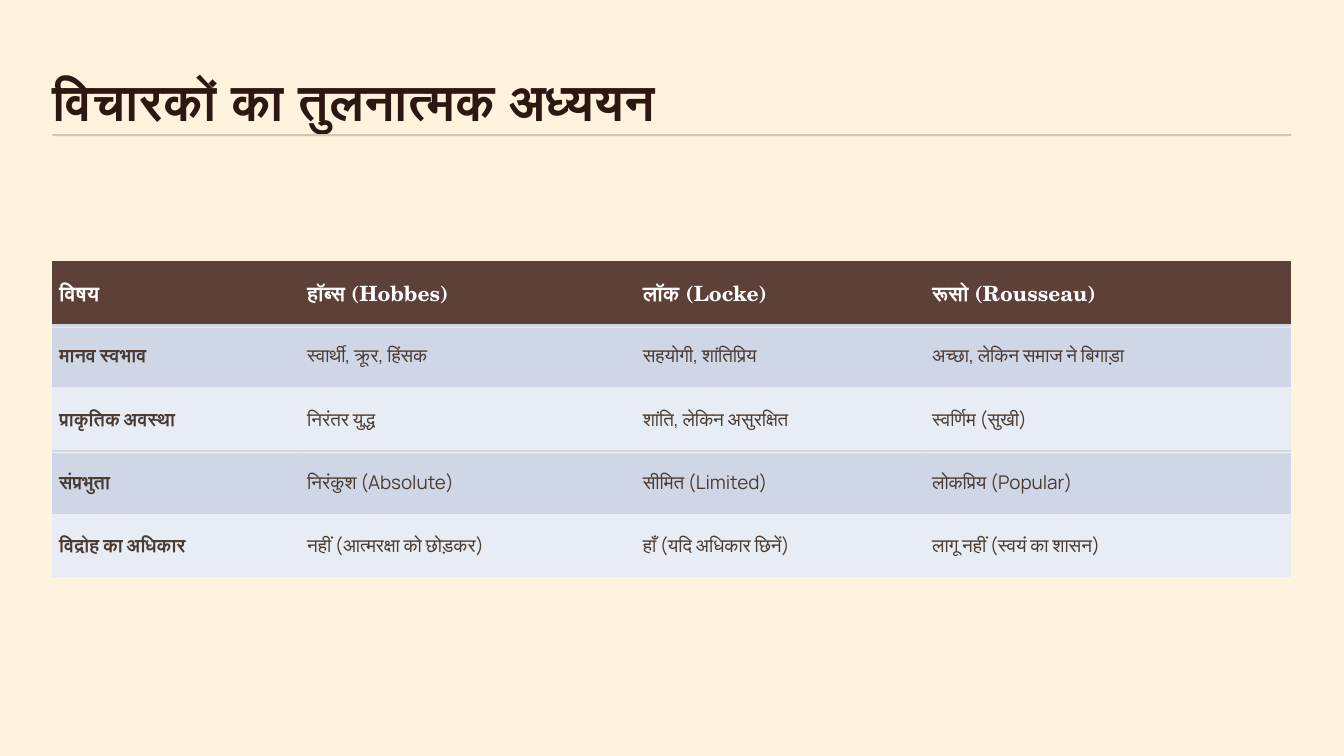
from lxml import etree
from pptx import Presentation
from pptx import util as u
from pptx.dml.color import RGBColor
from pptx.enum import shapes, text
from pptx.oxml.ns import qn

SERIF, SANS = "TeX Gyre Schola", "Manrope"
COLUMNS = [6.25, 8.46, 7.29, 9.22]
ROW = 1.59
RULE_PITCH = 1.58
ROWS = [
    ["विषय", "हॉब्स (Hobbes)", "लॉक (Locke)", "रूसो (Rousseau)"],
    ["मानव स्वभाव", "स्वार्थी, क्रूर, हिंसक", "सहयोगी, शांतिप्रिय", "अच्छा, लेकिन समाज ने बिगाड़ा"],
    ["प्राकृतिक अवस्था", "निरंतर युद्ध", "शांति, लेकिन असुरक्षित", "स्वर्णिम (सुखी)"],
    ["संप्रभुता", "निरंकुश (Absolute)", "सीमित (Limited)", "लोकप्रिय (Popular)"],
    ["विद्रोह का अधिकार", "नहीं (आत्मरक्षा को छोड़कर)", "हाँ (यदि अधिकार छिनें)", "लागू नहीं (स्वयं का शासन)"],
]


def paint(fill, color):
    fill.solid()
    fill.fore_color.rgb = RGBColor.from_string(color)


def add_run(p, words, size, font, color, bold):
    r = p.add_run()
    r.text = words
    r.font.size = u.Pt(size)
    r.font.bold = bold
    paint(r.font.fill, color)
    r.font.name = font
    for tag in ("a:ea", "a:cs"):
        etree.SubElement(r.font._element, qn(tag)).set("typeface", font)


def set_margins(obj, x, y):
    obj.margin_left = obj.margin_right = u.Cm(x)
    obj.margin_top = obj.margin_bottom = u.Cm(y)


def add_bar(s, x, y, w, h, color):
    sp = s.shapes.add_shape(shapes.MSO_SHAPE.RECTANGLE, u.Cm(x), u.Cm(y), u.Cm(w), u.Cm(h))
    sp.shadow.inherit = False
    paint(sp.fill, color)
    sp.line.fill.background()


def add_heading(s, x, y, w, h):
    tf = s.shapes.add_textbox(u.Cm(x), u.Cm(y), u.Cm(w + 1.32), u.Cm(h)).text_frame
    tf.word_wrap = True
    set_margins(tf, 0, 0)
    p = tf.paragraphs[0]
    p.line_spacing = 1.3
    add_run(p, "विचारकों का तुलनात्मक अध्ययन", 36, SERIF, "2C1810", True)
    add_bar(s, x, y + 2.06, w, 0.05, "D4C5B0")


def fill_cell(cell, words, row, col):
    cell.vertical_anchor = text.MSO_ANCHOR.MIDDLE
    set_margins(cell, 0.17, 0.08)
    tcPr = cell._tc.get_or_add_tcPr()
    for side in ("a:lnL", "a:lnR", "a:lnT", "a:lnB"):
        ln = etree.SubElement(tcPr, qn(side), w="0")
        etree.SubElement(ln, qn("a:noFill"))
    p = cell.text_frame.paragraphs[0]
    if row == 0:
        paint(cell.fill, "5D4037")
        add_run(p, words, 15, SERIF, "FFFFFF", True)
    else:
        paint(cell.fill, "CFD7E7" if row % 2 else "E8ECF4")
        add_run(p, words, 13.5, SANS, "4A3B32", col == 0)


def add_comparison(s, x, y, w):
    table = s.shapes.add_table(len(ROWS), len(COLUMNS), u.Cm(x), u.Cm(y),
                               u.Cm(w), u.Cm(ROW * len(ROWS))).table
    for column, width in zip(table.columns, COLUMNS):
        column.width = u.Cm(width)
    for i, words in enumerate(ROWS):
        table.rows[i].height = u.Cm(ROW)
        for j, word in enumerate(words):
            fill_cell(table.cell(i, j), word, i, j)
    for i in range(1, len(ROWS)):
        for j, width in enumerate(COLUMNS):
            add_bar(s, x + sum(COLUMNS[:j]), y + 0.07 + RULE_PITCH * i, width, 0.03, "EEEEEE")


def main():
    prs = Presentation()
    prs.slide_width, prs.slide_height = u.Cm(33.87), u.Cm(19.05)
    s = prs.slides.add_slide(prs.slide_layouts[6])
    paint(s.background.fill, "FFF3DD")
    add_heading(s, 1.32, 1.32, 31.22, 1.7)
    add_comparison(s, 1.32, 6.58, 31.22)
    prs.save("out.pptx")


if __name__ == "__main__":
    main()
